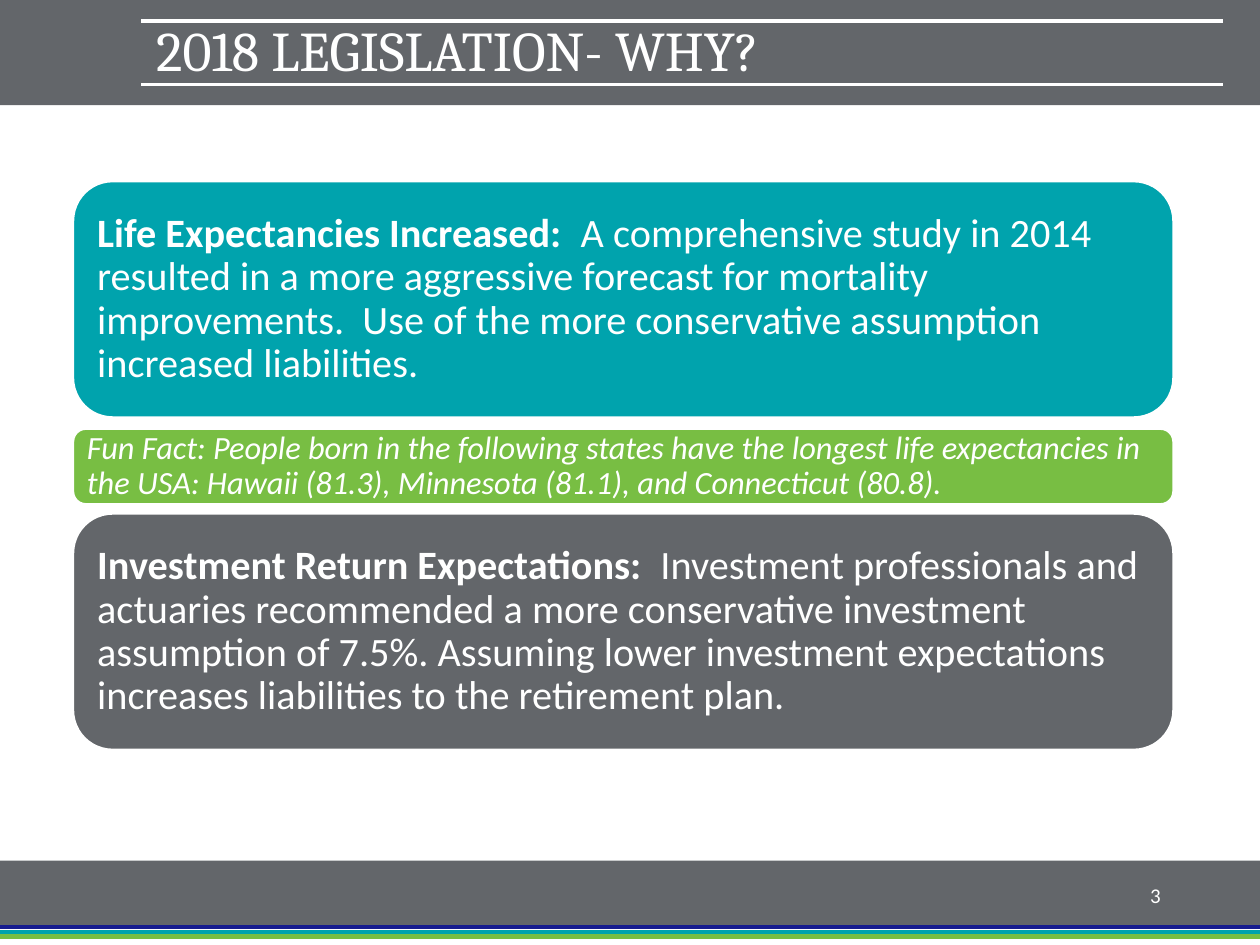
from typing import NamedTuple

from pptx import Presentation
from pptx.dml.color import RGBColor
from pptx.enum.shapes import MSO_CONNECTOR, MSO_SHAPE
from pptx.enum.text import MSO_ANCHOR, PP_ALIGN
from pptx.oxml.ns import qn
from pptx.util import Cm, Pt
from lxml.etree import SubElement

WHITE = RGBColor(0xFF, 0xFF, 0xFF)
GRAY = RGBColor(0x63, 0x66, 0x6A)
NAVY = RGBColor(0x17, 0x1C, 0x8F)
TEAL = RGBColor(0x00, 0xA3, 0xAD)
GREEN = RGBColor(0x78, 0xBE, 0x43)

SLIDE_WIDTH, SLIDE_HEIGHT = 25.4, 19.05
CARD_LEFT, CARD_WIDTH = 1.48, 22.17


class Run(NamedTuple):
    text: str
    bold: bool = False
    italic: bool = False


class Band(NamedTuple):
    top: float
    height: float
    color: RGBColor


class Rule(NamedTuple):
    left: float
    right: float
    y: float
    color: RGBColor
    weight: float


class Card(NamedTuple):
    top: float
    height: float
    color: RGBColor
    size: float
    inset: float
    runs: list[Run]


BANDS = [
    Band(17.35, 1.7, GRAY),
    Band(18.69, 0.36, WHITE),
    Band(0, 2.12, GRAY),
]
RULES = [
    Rule(0, SLIDE_WIDTH, 18.69, NAVY, 2.5),
    Rule(0, SLIDE_WIDTH, 18.79, TEAL, 2.5),
    Rule(0, SLIDE_WIDTH, 18.88, GREEN, 2.5),
    Rule(2.85, 24.66, 0.42, WHITE, 2),
    Rule(2.85, 24.66, 1.7, WHITE, 2),
]
CARDS = [
    Card(3.66, 4.75, TEAL, 23, 0.25, [
        Run("Life Expectancies Increased: ", bold=True),
        Run(" A comprehensive study in 2014 resulted in a more aggressive "
            "forecast for mortality improvements.  Use of the more "
            "conservative assumption increased liabilities."),
    ]),
    Card(8.65, 1.51, GREEN, 18.5, 0.2, [
        Run("Fun Fact: People born in the following states have the longest "
            "life expectancies in the USA: Hawaii (81.3), Minnesota (81.1), "
            "and Connecticut (80.8).", italic=True),
    ]),
    Card(10.36, 4.75, GRAY, 23, 0.25, [
        Run("Investment Return Expectations:  ", bold=True),
        Run("Investment professionals and actuaries recommended a more "
            "conservative investment assumption of 7.5%. Assuming lower "
            "investment expectations increases liabilities to the "
            "retirement plan."),
    ]),
]


def write_text(shape, runs: list[Run], *, size: float, font: str = "Calibri",
               align=PP_ALIGN.LEFT, line_spacing: float = 1.0,
               inset: float | None = None) -> None:
    """Fill a shape with one paragraph of white, vertically centred text."""
    frame = shape.text_frame
    frame.word_wrap = True
    frame.vertical_anchor = MSO_ANCHOR.MIDDLE
    if inset is not None:
        frame.margin_left = frame.margin_right = Cm(inset)
        frame.margin_top = frame.margin_bottom = Cm(inset)
    paragraph = frame.paragraphs[0]
    paragraph.alignment = align
    paragraph.line_spacing = line_spacing
    for item in runs:
        run = paragraph.add_run()
        run.text = item.text
        run.font.name = font
        run.font.size = Pt(size)
        run.font.bold = item.bold
        run.font.italic = item.italic
        run.font.color.rgb = WHITE


def add_filled(slide, kind, left: float, top: float, width: float,
               height: float, color: RGBColor):
    shape = slide.shapes.add_shape(kind, Cm(left), Cm(top), Cm(width), Cm(height))
    shape.shadow.inherit = False
    shape.fill.solid()
    shape.fill.fore_color.rgb = color
    shape.line.fill.background()
    return shape


def add_band(slide, band: Band) -> None:
    add_filled(slide, MSO_SHAPE.RECTANGLE, 0, band.top, SLIDE_WIDTH,
               band.height, band.color)


def add_rule(slide, rule: Rule) -> None:
    line = slide.shapes.add_connector(
        MSO_CONNECTOR.STRAIGHT, Cm(rule.left), Cm(rule.y), Cm(rule.right), Cm(rule.y))
    line.line.color.rgb = rule.color
    line.line.width = Pt(rule.weight)
    SubElement(line._element.spPr, qn("a:effectLst"))


def add_card(slide, card: Card) -> None:
    shape = add_filled(slide, MSO_SHAPE.ROUNDED_RECTANGLE, CARD_LEFT, card.top,
                       CARD_WIDTH, card.height, card.color)
    shape.line.color.rgb = WHITE
    shape.line.width = Pt(1)
    write_text(shape, card.runs, size=card.size, line_spacing=0.9, inset=card.inset)


def main() -> None:
    presentation = Presentation()
    presentation.slide_width = Cm(SLIDE_WIDTH)
    presentation.slide_height = Cm(SLIDE_HEIGHT)
    slide = presentation.slides.add_slide(presentation.slide_layouts[6])

    for band in BANDS:
        add_band(slide, band)
    for rule in RULES:
        add_rule(slide, rule)
    for card in CARDS:
        add_card(slide, card)

    title = slide.shapes.add_textbox(Cm(2.9), Cm(0.03), Cm(20.83), Cm(2.08))
    write_text(title, [Run("2018 LEGISLATION- WHY?")], size=32, font="Cambria",
               line_spacing=0.9)
    number = slide.shapes.add_textbox(Cm(17.93), Cm(17.53), Cm(5.72), Cm(1.02))
    write_text(number, [Run("3")], size=12, align=PP_ALIGN.RIGHT)

    presentation.save("out.pptx")


if __name__ == "__main__":
    main()
